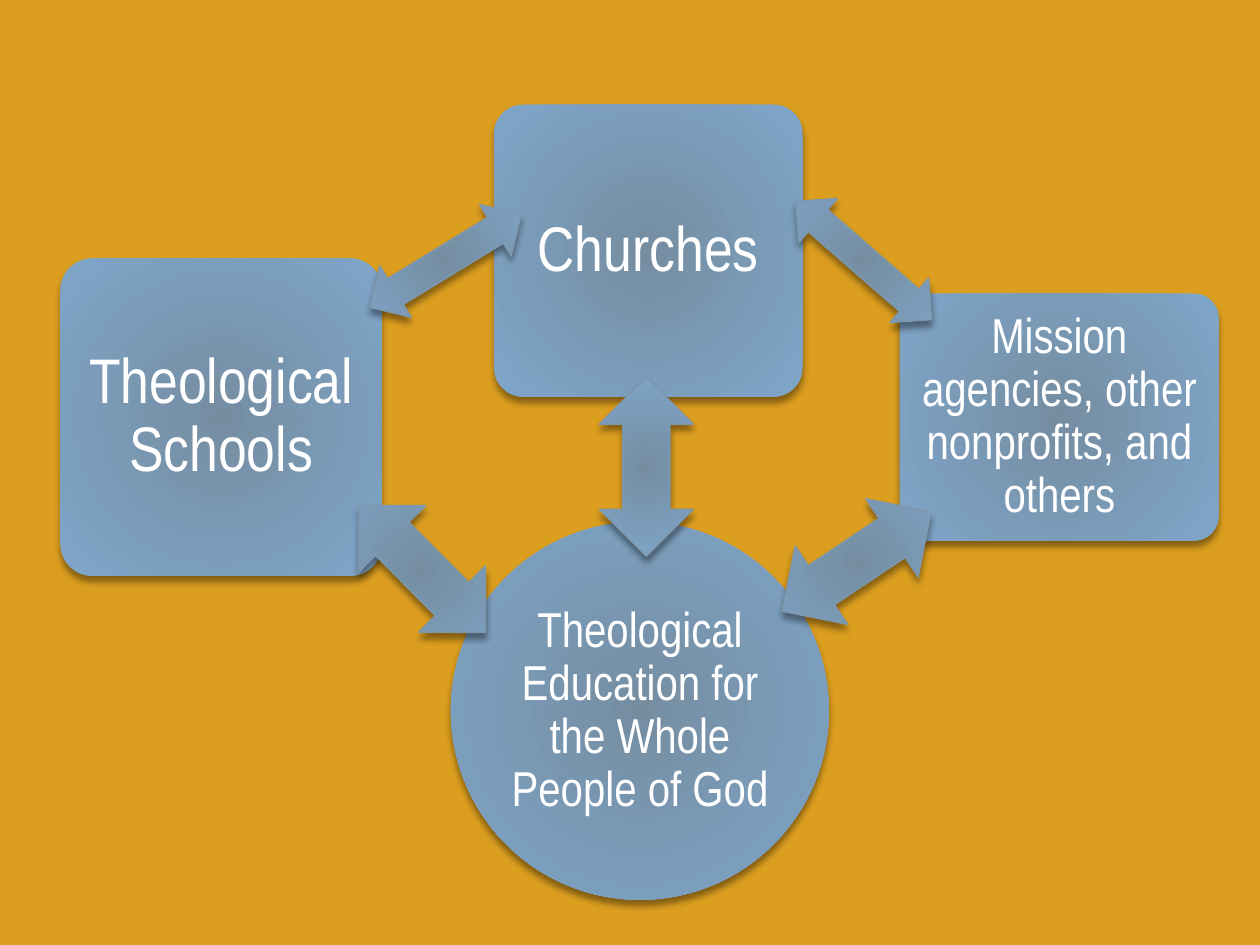
from lxml import etree
from pptx import Presentation
from pptx.dml.color import RGBColor
from pptx.enum import shapes, text
from pptx.oxml import ns
from pptx.util import Cm, Pt

BACKGROUND = RGBColor(0xDC, 0x9E, 0x1F)
CENTRE_BLUE = RGBColor(0x75, 0x8D, 0xA1)
EDGE_BLUE = RGBColor(0x7F, 0xA6, 0xCA)
OUTLINE = RGBColor(0x7E, 0x97, 0xAD)
WHITE = RGBColor(0xFF, 0xFF, 0xFF)
FONT = "Arial Narrow"

ROUNDED = shapes.MSO_SHAPE.ROUNDED_RECTANGLE
CIRCLE = shapes.MSO_SHAPE.OVAL

PARTNERS = [
    (CIRCLE, (9.09, 10.52, 7.62, 7.62),
     "Theological Education for the Whole People of God", 28, 0.05),
    (ROUNDED, (1.22, 5.21, 6.48, 6.4), "Theological Schools", 36, 0.18),
    (ROUNDED, (9.96, 2.11, 6.22, 5.89), "Churches", 36, 0.18),
    (ROUNDED, (18.14, 5.92, 6.43, 4.98),
     "Mission agencies, other nonprofits, and others", 28, 0.15),
]

LINKS = [
    ((8.51, 11.47), (3.61, 1.9), 45.2),
    ((13.03, 9.41), (3.61, 1.9), 90),
    ((17.27, 11.32), (3.61, 1.9), 146.2),
    ((8.98, 5.26), (3.58, 1.22), 148.5),
    ((17.41, 5.25), (3.63, 1.19), 221.1),
]


def add_child(parent, tag, **attributes):
    return etree.SubElement(parent, ns.qn(tag), attributes)


def apply_radial_fill(shape):
    shape.fill.gradient()
    for stop, color in zip(shape.fill.gradient_stops, (CENTRE_BLUE, EDGE_BLUE)):
        stop.color.rgb = color
    gradient = shape.element.spPr.find(ns.qn("a:gradFill"))
    gradient.remove(gradient.find(ns.qn("a:lin")))
    radial = add_child(gradient, "a:path", path="circle")
    add_child(radial, "a:fillToRect", l="100000", t="100000", r="100000", b="100000")


def apply_shadow(shape):
    shape.shadow.inherit = False
    effects = shape.element.spPr.find(ns.qn("a:effectLst"))
    shadow = add_child(effects, "a:outerShdw", blurRad=str(Pt(4)), dist=str(Pt(3.4)),
                       dir="5400000", rotWithShape="0")
    color = add_child(shadow, "a:srgbClr", val="000000")
    add_child(color, "a:alpha", val="40000")


def add_blue_shape(slide, kind, box):
    shape = slide.shapes.add_shape(kind, *map(Cm, box))
    apply_radial_fill(shape)
    apply_shadow(shape)
    return shape


def add_partner(slide, kind, box, label, size, inset):
    shape = add_blue_shape(slide, kind, box)
    shape.line.fill.background()
    if kind == ROUNDED:
        shape.adjustments[0] = 0.1
    frame = shape.text_frame
    frame.word_wrap = True
    frame.vertical_anchor = text.MSO_ANCHOR.MIDDLE
    frame.margin_left = frame.margin_right = Cm(inset)
    frame.margin_top = frame.margin_bottom = Cm(inset)
    paragraph = frame.paragraphs[0]
    paragraph.alignment = text.PP_ALIGN.CENTER
    paragraph.line_spacing = 0.9
    run = paragraph.add_run()
    run.text = label
    run.font.name = FONT
    run.font.size = Pt(size)
    run.font.color.rgb = WHITE


def add_link(slide, centre, size, angle):
    (x, y), (width, height) = centre, size
    box = (x - width / 2, y - height / 2, width, height)
    arrow = add_blue_shape(slide, shapes.MSO_SHAPE.LEFT_RIGHT_ARROW, box)
    arrow.rotation = angle
    arrow.line.color.rgb = OUTLINE
    arrow.line.width = Pt(0.75)


def main():
    presentation = Presentation()
    presentation.slide_width = Cm(25.4)
    presentation.slide_height = Cm(19.05)
    slide = presentation.slides.add_slide(presentation.slide_layouts[6])
    slide.background.fill.solid()
    slide.background.fill.fore_color.rgb = BACKGROUND
    for partner in PARTNERS:
        add_partner(slide, *partner)
    for link in LINKS:
        add_link(slide, *link)
    presentation.save("out.pptx")


if __name__ == "__main__":
    main()
